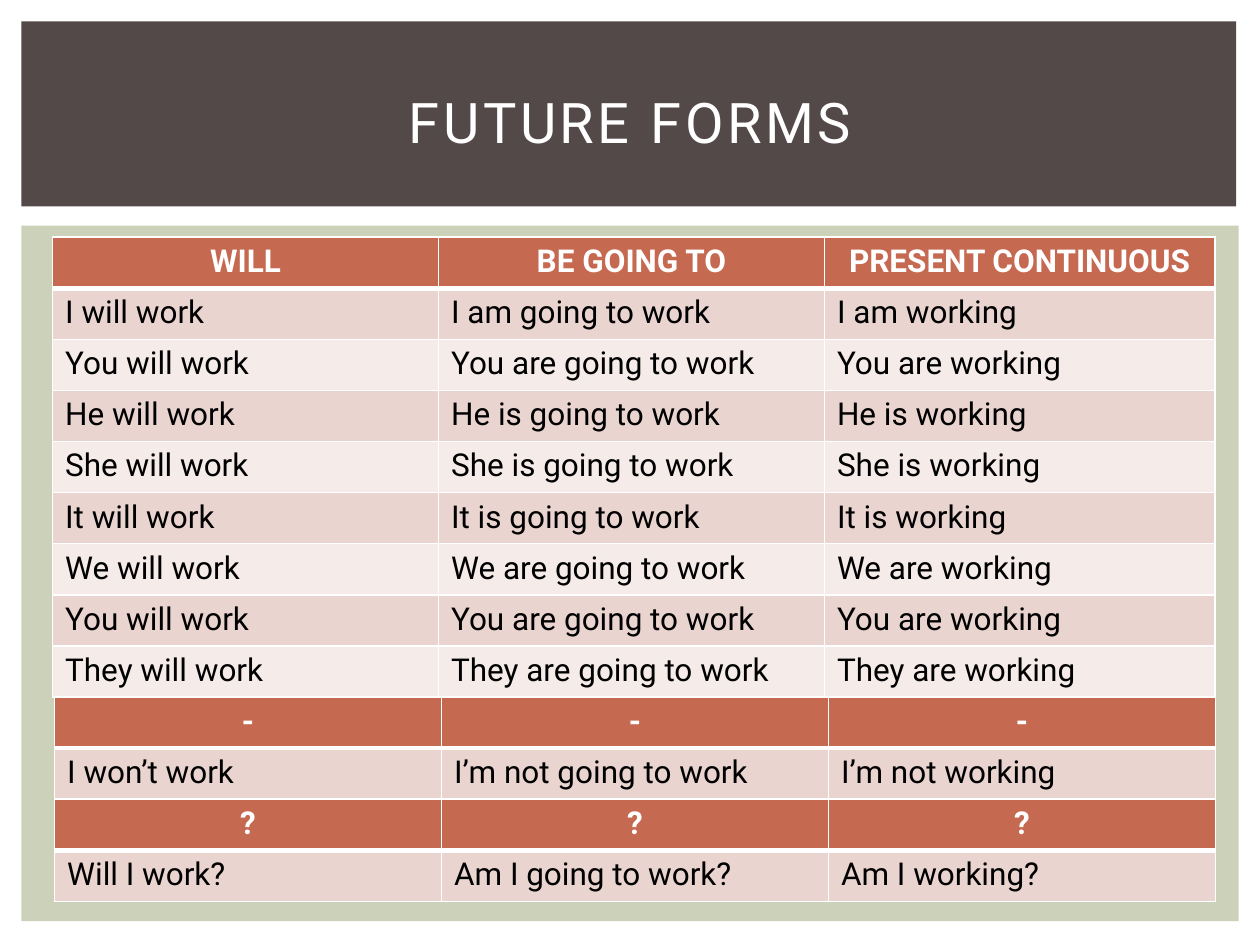
from lxml import etree
from pptx import Presentation
from pptx.dml.color import RGBColor
from pptx.enum.shapes import MSO_SHAPE
from pptx.enum.text import MSO_ANCHOR, PP_ALIGN
from pptx.oxml.ns import qn
from pptx.util import Cm, Pt

RECTANGLE = MSO_SHAPE.RECTANGLE
MIDDLE = MSO_ANCHOR.MIDDLE
LEFT, CENTER = PP_ALIGN.LEFT, PP_ALIGN.CENTER

# Content
TITLE = "FUTURE FORMS"
AFFIRMATIVE = [("WILL", "BE GOING TO", "PRESENT CONTINUOUS")] + [
    (f"{subject} will work", f"{subject} {verb} going to work", f"{subject} {verb} working")
    for subject, verb in [
        ("I", "am"), ("You", "are"), ("He", "is"), ("She", "is"),
        ("It", "is"), ("We", "are"), ("You", "are"), ("They", "are"),
    ]
]
NEGATIVE = [("-",) * 3, ("I won’t work", "I’m not going to work", "I’m not working")]
QUESTION = [("?",) * 3, ("Will I work?", "Am I going to work?", "Am I working?")]

# Format
FONT = "Roboto"
COLORS = {
    "panel": "CCD1B9",
    "banner": "534949",
    "header": "C66951",
    "odd_row": "EAD4D0",
    "even_row": "F5EBE9",
    "white": "FFFFFF",
    "black": "000000",
}
ROW_HEIGHT = 1.03
TABLE_TOP = 4.78
THIN, THICK = 1, 3

# Rows, left edge and column widths, stacked from the top down
TABLES = [
    (AFFIRMATIVE, 1.06, (7.78, 7.78, 7.87)),
    (NEGATIVE, 1.1, (7.8, 7.8, 7.8)),
    (QUESTION, 1.1, (7.8, 7.8, 7.8)),
]


def color(name):
    return RGBColor.from_string(COLORS[name])


def write_text(text_frame, text, size=18, fill="black", bold=False, align=LEFT, spacing=0):
    paragraph = text_frame.paragraphs[0]
    paragraph.alignment = align
    run = paragraph.add_run()
    run.text = text
    run.font.name = FONT
    run.font.size = Pt(size)
    run.font.bold = bold
    run.font.color.rgb = color(fill)
    if spacing:
        run.font._element.set("spc", str(spacing * 100))


def add_block(slide, left, top, width, height, fill):
    shape = slide.shapes.add_shape(RECTANGLE, Cm(left), Cm(top), Cm(width), Cm(height))
    shape.shadow.inherit = False
    shape.fill.solid()
    shape.fill.fore_color.rgb = color(fill)
    shape.line.fill.background()


def set_borders(cell, top, bottom):
    properties = cell._tc.get_or_add_tcPr()
    sides = [("a:lnL", THIN), ("a:lnR", THIN), ("a:lnT", top), ("a:lnB", bottom)]
    for position, (tag, width) in enumerate(sides):
        line = etree.Element(qn(tag), w=str(Pt(width)))
        solid = etree.SubElement(line, qn("a:solidFill"))
        etree.SubElement(solid, qn("a:srgbClr"), val=COLORS["white"])
        properties.insert(position, line)


def add_forms_table(slide, rows, left, top, widths):
    frame = slide.shapes.add_table(
        len(rows), len(widths), Cm(left), Cm(top), Cm(sum(widths)), Cm(ROW_HEIGHT * len(rows))
    )
    table = frame.table
    for column, width in zip(table.columns, widths):
        column.width = Cm(width)
    for row_index, texts in enumerate(rows):
        table.rows[row_index].height = Cm(ROW_HEIGHT)
        is_header = row_index == 0
        fill = "header" if is_header else "odd_row" if row_index % 2 else "even_row"
        for column_index, text in enumerate(texts):
            cell = table.cell(row_index, column_index)
            cell.fill.solid()
            cell.fill.fore_color.rgb = color(fill)
            set_borders(
                cell,
                top=THICK if row_index == 1 else THIN,
                bottom=THICK if is_header else THIN,
            )
            if is_header:
                write_text(cell.text_frame, text, fill="white", bold=True, align=CENTER)
            else:
                write_text(cell.text_frame, text)


def main():
    presentation = Presentation()
    presentation.slide_width, presentation.slide_height = Cm(25.4), Cm(19.05)
    slide = presentation.slides.add_slide(presentation.slide_layouts[6])

    # Background panel and title banner
    add_block(slide, 0.43, 4.55, 24.54, 14.02, "panel")
    add_block(slide, 0.43, 0.43, 24.49, 3.73, "banner")

    # Title
    title = slide.shapes.add_textbox(Cm(1.06), Cm(0.99), Cm(23.29), Cm(2.92))
    title.text_frame.word_wrap = True
    title.text_frame.vertical_anchor = MIDDLE
    write_text(title.text_frame, TITLE, size=32, fill="white", align=CENTER, spacing=2)

    # Tables
    top = TABLE_TOP
    for rows, left, widths in TABLES:
        add_forms_table(slide, rows, left, top, widths)
        top += ROW_HEIGHT * len(rows)

    presentation.save("out.pptx")


if __name__ == "__main__":
    main()
